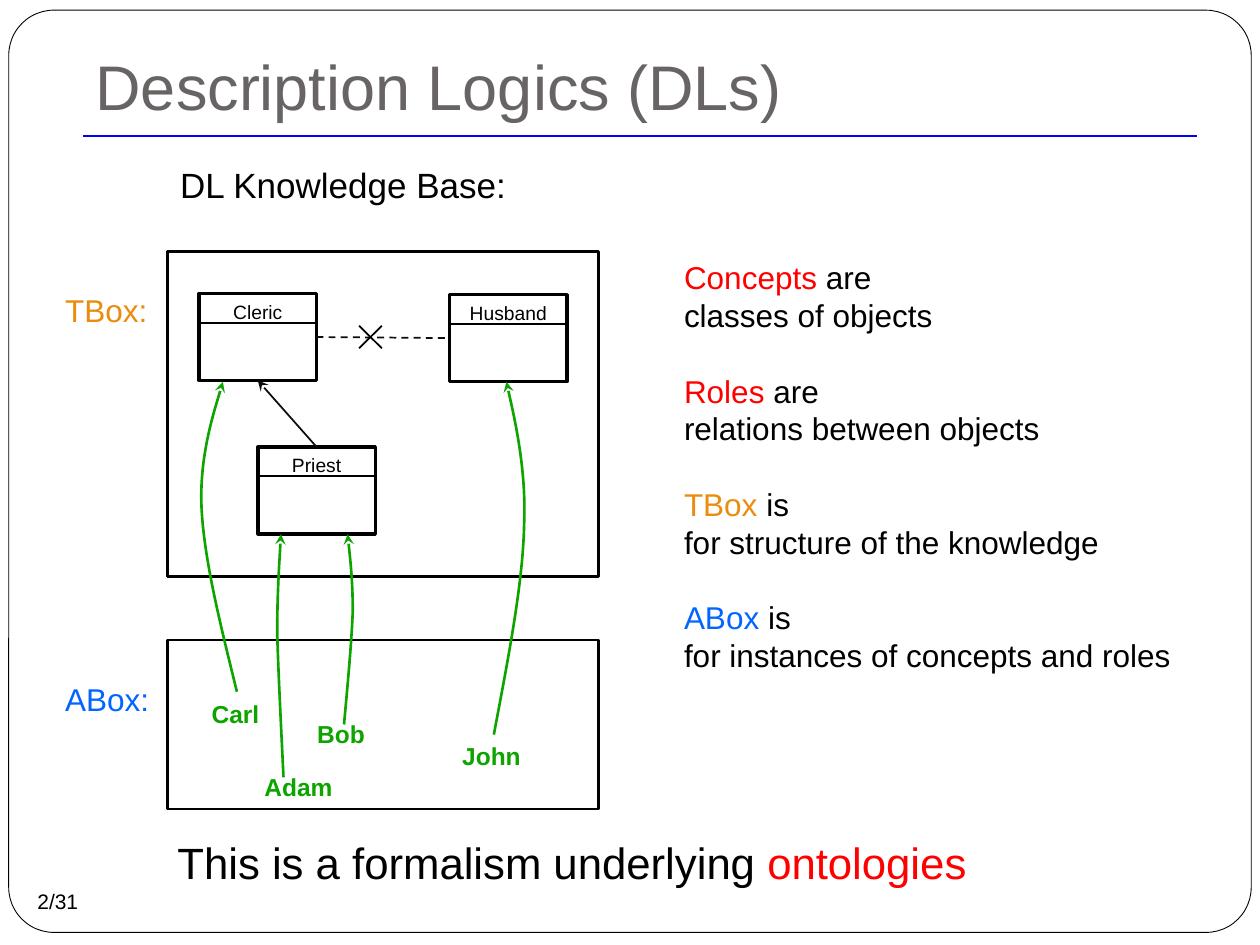
"""Build a slide that explains the knowledge base of Description Logics."""
from lxml.etree import SubElement
from pptx import Presentation
from pptx.dml.color import RGBColor
from pptx.enum.dml import MSO_LINE_DASH_STYLE as Dash
from pptx.enum.shapes import MSO_CONNECTOR as Connector, MSO_SHAPE as Shape
from pptx.enum.text import MSO_ANCHOR as Anchor, PP_ALIGN as Align
from pptx.oxml.ns import qn
from pptx.util import Pt

COLORS = {
    "black": "000000", "white": "FFFFFF", "arrow": "0D0D0D", "title": "696464", "rule": "0000FF",
    "red": "FF0000", "tbox": "EA8C0D", "abox": "0066FF", "individual": "0DA400",
}
TOP, LEFT, BOTTOM, RIGHT = range(4)


def write_text(shape, paragraphs, size=18, bold=False, align=Align.LEFT, anchor=Anchor.TOP,
               wrap=True, spacing=None, after=0, inset_bottom=3.6):
    frame = shape.text_frame
    frame.word_wrap = wrap
    frame.vertical_anchor = anchor
    frame.margin_bottom = Pt(inset_bottom)
    for index, runs in enumerate(paragraphs):
        paragraph = frame.add_paragraph() if index else frame.paragraphs[0]
        paragraph.alignment = align
        paragraph.space_after = Pt(after)
        if spacing:
            paragraph.line_spacing = Pt(spacing)
        for text, color in runs:
            for number, line in enumerate(text.split("\n")):
                if number:
                    paragraph.add_line_break()
                run = paragraph.add_run()
                run.text = line
                run.font.name = "Arial"
                run.font.size = Pt(size)
                run.font.bold = bold
                run.font.color.rgb = RGBColor.from_string(COLORS[color])


def style_outline(shape, color="black", width=1, dash=None, arrow=False):
    shape.line.color.rgb = RGBColor.from_string(COLORS[color])
    shape.line.width = Pt(width)
    if dash:
        shape.line.dash_style = dash
    properties = shape.element.spPr
    if arrow:
        SubElement(properties.find(qn("a:ln")), qn("a:tailEnd"), type="stealth")
    SubElement(properties, qn("a:effectLst"))


presentation = Presentation()
presentation.slide_width, presentation.slide_height = Pt(720), Pt(540)
slide = presentation.slides.add_slide(presentation.slide_layouts[6])
shapes = slide.shapes

border = shapes.add_shape(Shape.ROUNDED_RECTANGLE, Pt(5), Pt(5.8), Pt(710), Pt(527))
border.adjustments[0] = 0.049
border.fill.solid()
border.fill.fore_color.rgb = RGBColor.from_string(COLORS["white"])
style_outline(border, width=0.5)

title_rule = shapes.add_connector(Connector.STRAIGHT, Pt(47.5), Pt(77.8), Pt(684), Pt(77.8))
style_outline(title_rule, "rule")
title = shapes.add_textbox(Pt(47.5), Pt(21.6), Pt(636.5), Pt(56.2))
write_text(title, [[("Description Logics (DLs)", "title")]], size=36, anchor=Anchor.BOTTOM,
           inset_bottom=7.2)

CARD_WIDTH, CARD_HEIGHT, HEADER_HEIGHT = 67, 49.6, 16.7
concepts = {}
for name, left, top in [("Cleric", 113.8, 167.8), ("Priest", 147.5, 255.5), ("Husband", 257, 168.4)]:
    card = shapes.add_shape(Shape.RECTANGLE, Pt(left), Pt(top), Pt(CARD_WIDTH), Pt(CARD_HEIGHT))
    card.fill.solid()
    card.fill.fore_color.rgb = RGBColor.from_string(COLORS["white"])
    style_outline(card, width=2)
    write_text(card, [[(name, "black")]], size=11, align=Align.CENTER)
    header_y = top + HEADER_HEIGHT
    divider = shapes.add_connector(Connector.STRAIGHT, Pt(left), Pt(header_y),
                                   Pt(left + CARD_WIDTH), Pt(header_y))
    style_outline(divider)
    concepts[name] = card

for start, start_side, end, end_side, dash, arrow in [
    ("Priest", TOP, "Cleric", BOTTOM, None, True),
    ("Cleric", RIGHT, "Husband", LEFT, Dash.DASH, False),
]:
    relation = shapes.add_connector(Connector.STRAIGHT, 0, 0, 0, 0)
    relation.begin_connect(concepts[start], start_side)
    relation.end_connect(concepts[end], end_side)
    style_outline(relation, "arrow", dash=dash, arrow=arrow)

for start_y, end_y in [(199, 186.2), (186.2, 199)]:
    cross_stroke = shapes.add_connector(Connector.STRAIGHT, Pt(205.2), Pt(start_y),
                                        Pt(218.2), Pt(end_y))
    style_outline(cross_stroke)

for top, height in [(143.8, 185.8), (365.8, 96.4)]:
    frame_box = shapes.add_shape(Shape.RECTANGLE, Pt(95.8), Pt(top), Pt(246.2), Pt(height))
    frame_box.fill.background()
    style_outline(frame_box, width=1.5)

individuals = [
    ("Carl", 113.8, 396, 48, [(135.4, 395.3), (126, 357.1), (116.6, 319.7), (115.2, 290.2),
                              (113.8, 260.6), (127.4, 218.2), (127.4, 218.2)]),
    ("John", 257, 419.8, 48, [(282.2, 419.8), (290.2, 377.3), (298.8, 334.1), (299.5, 300.2),
                              (301, 267.1), (289.4, 218.2), (289.4, 218.2)]),
    ("Adam", 144, 437.8, 63.4, [(162, 444.2), (160.6, 414.7), (159.1, 385.2), (158.4, 362.2),
                                (158.4, 338.4), (160.6, 305.3), (160.6, 305.3)]),
    ("Bob", 174.2, 407.5, 63.4, [(196.6, 414), (198.7, 391), (200.9, 367.9), (201.6, 349.2),
                                 (201.6, 331.2), (198.7, 305.3), (198.7, 305.3)]),
]
for name, left, top, width, points in individuals:
    label = shapes.add_textbox(Pt(left), Pt(top), Pt(width), Pt(24.5))
    write_text(label, [[(name, "individual")]], size=14, bold=True)
    builder = shapes.build_freeform(Pt(points[0][0]), Pt(points[0][1]))
    builder.add_line_segments([(Pt(x), Pt(y)) for x, y in points[1:]], close=False)
    membership = builder.convert_to_shape()
    outline = membership.element.spPr.find(".//" + qn("a:path"))
    segments = outline.findall(qn("a:lnTo"))
    for first in range(0, len(segments), 3):
        curve = SubElement(outline, qn("a:cubicBezTo"))
        for segment in segments[first:first + 3]:
            curve.append(segment[0])
            outline.remove(segment)
    membership.fill.background()
    style_outline(membership, "individual", width=1.5, arrow=True)

definitions = [
    [("Concepts", "red"), (" are\nclasses of objects", "black")],
    [("Roles", "red"), (" are\nrelations between objects", "black")],
    [("TBox", "tbox"), (" is\nfor structure of the knowledge", "black")],
    [("ABox", "abox"), (" is\nfor instances of concepts and roles", "black")],
]
definition_box = shapes.add_textbox(Pt(383.8), Pt(144), Pt(300.2), Pt(247))
write_text(definition_box, definitions, spacing=21.6, after=21.6)

for left, top, width, height, runs, text_format in [
    (95.8, 90, 217.4, 31.7, [("DL Knowledge Base:", "black")], {"size": 20}),
    (30.2, 162.7, 62, 28.8, [("TBox:", "tbox")], {"wrap": False}),
    (30.2, 385.2, 64, 28.8, [("ABox:", "abox")], {"wrap": False}),
    (94.3, 473.8, 470.9, 37.4, [("This is a formalism underlying ", "black"), ("ontologies", "red")],
     {"size": 25, "wrap": False}),
    (3.6, 504, 48.2, 21.6, [("2/31", "black")], {"size": 12, "align": Align.RIGHT}),
]:
    label = shapes.add_textbox(Pt(left), Pt(top), Pt(width), Pt(height))
    write_text(label, [runs], **text_format)

presentation.save("out.pptx")
